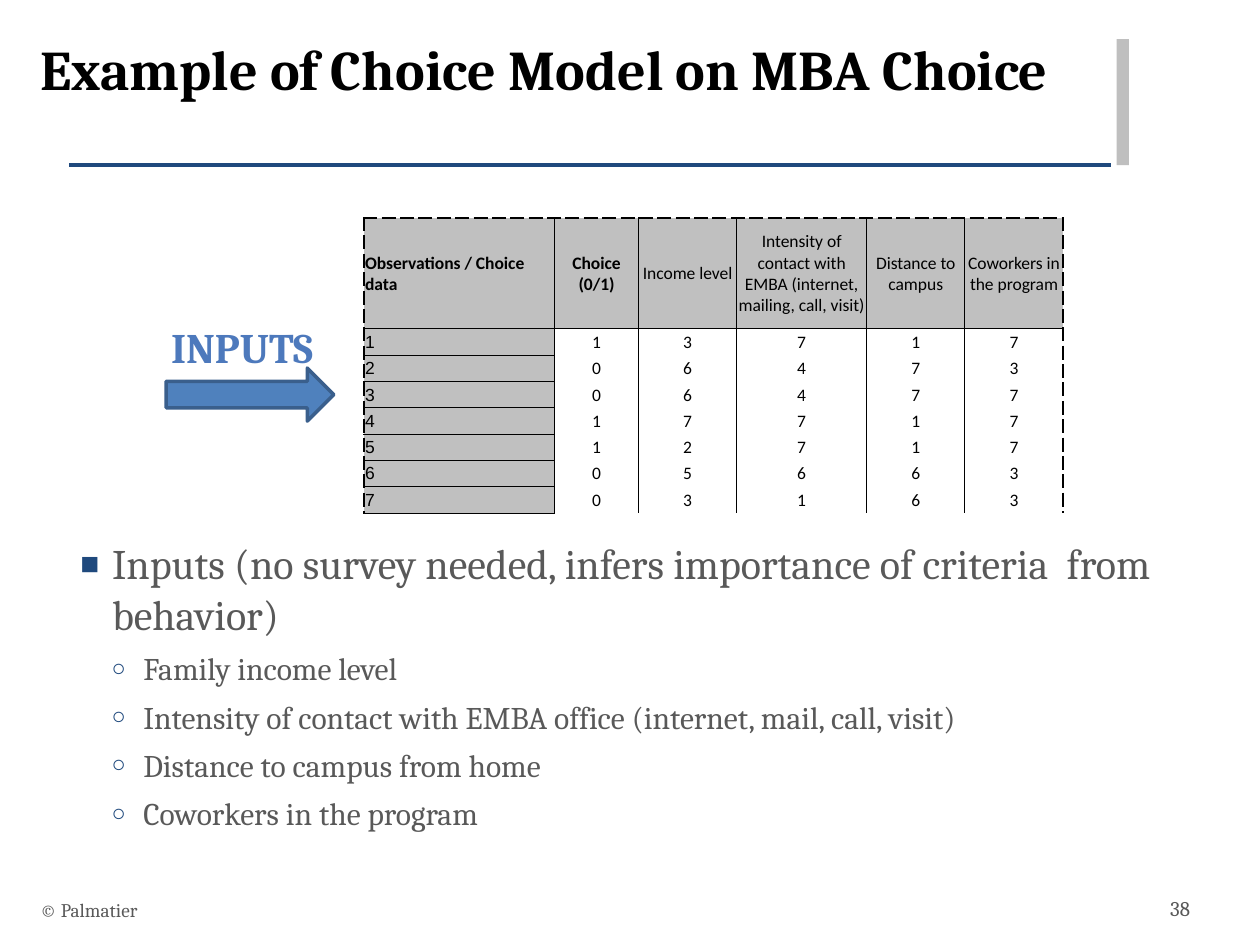
from lxml.etree import SubElement
from pptx import Presentation
from pptx.dml.color import RGBColor
from pptx.enum.shapes import MSO_CONNECTOR, MSO_SHAPE
from pptx.enum.text import MSO_ANCHOR as Anchor, MSO_AUTO_SIZE as AutoSize, PP_ALIGN as Align
from pptx.oxml.ns import qn
from pptx.util import Cm, Pt

SERIF = "Cambria"
NAVY, GREY, BLACK = "1F497D", "595959", "000000"
SOLID, DASHED = (0.5, "solid"), (1, "dash")

COLUMN_WIDTHS = [3.84, 1.69, 1.98, 2.62, 1.98, 1.98]
HEADINGS = [
    "Observations / Choice data",
    "Choice (0/1)",
    "Income level",
    "Intensity of contact with EMBA (internet, mailing, call, visit)",
    "Distance to campus",
    "Coworkers in the program",
]
OBSERVATIONS = [
    (1, 1, 3, 7, 1, 7),
    (2, 0, 6, 4, 7, 3),
    (3, 0, 6, 4, 7, 7),
    (4, 1, 7, 7, 1, 7),
    (5, 1, 2, 7, 1, 7),
    (6, 0, 5, 6, 6, 3),
    (7, 0, 3, 1, 6, 3),
]
INPUT_HEADING = "Inputs (no survey needed, infers importance of criteria  from behavior)"
CRITERIA = [
    "Family income level",
    "Intensity of contact with EMBA office (internet, mail, call, visit)",
    "Distance to campus from home",
    "Coworkers in the program",
]


def colour(hex_code):
    return RGBColor.from_string(hex_code)


def add_run(paragraph, text, size, hex_code, face=SERIF, bold=False):
    run = paragraph.add_run()
    run.text = text
    font = run.font
    font.size, font.name, font.bold = Pt(size), face, bold
    font.color.rgb = colour(hex_code)


def add_label(slide, box, text, size, hex_code, bold=False,
              align=Align.LEFT, anchor=Anchor.TOP):
    frame = slide.shapes.add_textbox(*map(Cm, box)).text_frame
    frame.word_wrap = True
    frame.vertical_anchor = anchor
    paragraph = frame.paragraphs[0]
    paragraph.alignment = align
    add_run(paragraph, text, size, hex_code, bold=bold)


def add_block(slide, preset, box, fill, outline=None):
    block = slide.shapes.add_shape(preset, *map(Cm, box))
    block.shadow.inherit = False
    block.fill.solid()
    block.fill.fore_color.rgb = colour(fill)
    if outline:
        block.line.color.rgb = colour(outline)
        block.line.width = Pt(2)
    else:
        block.line.fill.background()


def add_header(slide, left, top, width, height):
    rule_y = Cm(top + height)
    rule = slide.shapes.add_connector(
        MSO_CONNECTOR.STRAIGHT, Cm(left + 0.84), rule_y, Cm(left + width - 0.36), rule_y)
    rule.line.color.rgb = colour(NAVY)
    rule.line.width = Pt(2)
    SubElement(rule._element.spPr, qn("a:effectLst"))
    add_block(slide, MSO_SHAPE.RECTANGLE, (left + width - 0.25, top, 0.25, height), "BFBFBF")

    title = slide.shapes.title
    title.left, title.top = Cm(left), Cm(top - 0.23)
    title.width, title.height = Cm(width - 0.81), Cm(height)
    frame = title.text_frame
    frame.auto_size = AutoSize.NONE
    frame.vertical_anchor = Anchor.TOP
    heading = frame.paragraphs[0]
    heading.alignment = Align.LEFT
    add_run(heading, "Example of Choice Model on MBA Choice", 32, BLACK, bold=True)


def add_inputs_arrow(slide, left, top, width, height):
    add_block(slide, MSO_SHAPE.RIGHT_ARROW, (left + 2.28, top + 1.07, 3.38, height - 1.07),
              "4F81BD", "3A5F8C")
    add_label(slide, (left, top, width, 1.27), "INPUTS", 24, "4D79BC", True, Align.CENTER)


def set_borders(cell, **sides):
    properties = cell._tc.get_or_add_tcPr()
    for side in "LRTB":
        border = SubElement(properties, qn(f"a:ln{side}"))
        if not sides.get(side):
            SubElement(border, qn("a:noFill"))
            continue
        width, dash = sides[side]
        border.set("w", str(Pt(width)))
        fill = SubElement(border, qn("a:solidFill"))
        SubElement(fill, qn("a:srgbClr")).set("val", BLACK)
        SubElement(border, qn("a:prstDash")).set("val", dash)


def add_choice_table(slide, left, top, width, height):
    rows = [HEADINGS, *OBSERVATIONS]
    last = len(HEADINGS) - 1
    row_height = 0.53
    table = slide.shapes.add_table(
        len(rows), len(HEADINGS), Cm(left), Cm(top), Cm(width), Cm(height)).table
    table.first_row = table.horz_banding = False
    for column, column_width in zip(table.columns, COLUMN_WIDTHS):
        column.width = Cm(column_width)
    for row in table.rows:
        row.height = Cm(row_height)
    table.rows[0].height = Cm(height - row_height * len(OBSERVATIONS))

    for r, values in enumerate(rows):
        for c, value in enumerate(values):
            cell = table.cell(r, c)
            heading, stub = r == 0, c == 0
            shaded = heading or stub
            set_borders(
                cell,
                L=DASHED if stub else SOLID,
                R=DASHED if c == last else SOLID,
                T=DASHED if heading else SOLID if stub or r == 1 else None,
                B=SOLID if shaded else None,
            )
            if shaded:
                cell.fill.solid()
                cell.fill.fore_color.rgb = colour("C0C0C0")
            else:
                cell.fill.background()
            cell.margin_left = cell.margin_right = cell.margin_top = Cm(0.02)
            cell.margin_bottom = 0
            cell.vertical_anchor = Anchor.MIDDLE
            paragraph = cell.text_frame.paragraphs[0]
            paragraph.alignment = Align.LEFT if stub else Align.CENTER
            face = "Arial" if stub and not heading else "Calibri"
            add_run(paragraph, str(value), 10, BLACK, face, heading and c < 2)


def set_bullet(paragraph, symbol, indent):
    properties = paragraph._p.get_or_add_pPr()
    properties.set("marL", str(Cm(indent)))
    properties.set("indent", str(-Cm(0.64)))
    bullet_colour = SubElement(properties, qn("a:buClr"))
    SubElement(bullet_colour, qn("a:srgbClr")).set("val", NAVY)
    SubElement(properties, qn("a:buSzPct")).set("val", "75000")
    SubElement(properties, qn("a:buFont")).set("typeface", "Arial")
    SubElement(properties, qn("a:buChar")).set("char", symbol)


def add_criteria(slide, left, top, width, height):
    frame = slide.shapes.add_textbox(Cm(left), Cm(top), Cm(width), Cm(height)).text_frame
    frame.word_wrap = True
    heading = frame.paragraphs[0]
    set_bullet(heading, "■", 0.64)
    add_run(heading, INPUT_HEADING, 24, GREY)
    for criterion in CRITERIA:
        item = frame.add_paragraph()
        item.level = 1
        item.space_before = Pt(6)
        set_bullet(item, "○", 1.27)
        add_run(item, criterion, 18, GREY)


def add_footer(slide, left, top, width, height):
    add_label(slide, (left, top, 17, height), "© Palmatier", 11, GREY, anchor=Anchor.MIDDLE)
    add_label(slide, (left + width - 1.55, top + 0.1, 1.55, height), "38", 12, GREY)


def main():
    deck = Presentation()
    deck.slide_width, deck.slide_height = Cm(25.4), Cm(19.05)
    slide = deck.slides.add_slide(deck.slide_layouts[5])
    add_header(slide, 0.56, 0.79, 22.2, 2.54)
    add_inputs_arrow(slide, 1.07, 6.35, 7.62, 2.14)
    add_choice_table(slide, 7.34, 4.39, sum(COLUMN_WIDTHS), 5.95)
    add_criteria(slide, 1.37, 10.72, 22.86, 4.8)
    add_footer(slide, 0.56, 17.83, 24.33, 1.02)
    deck.save("out.pptx")


if __name__ == "__main__":
    main()
